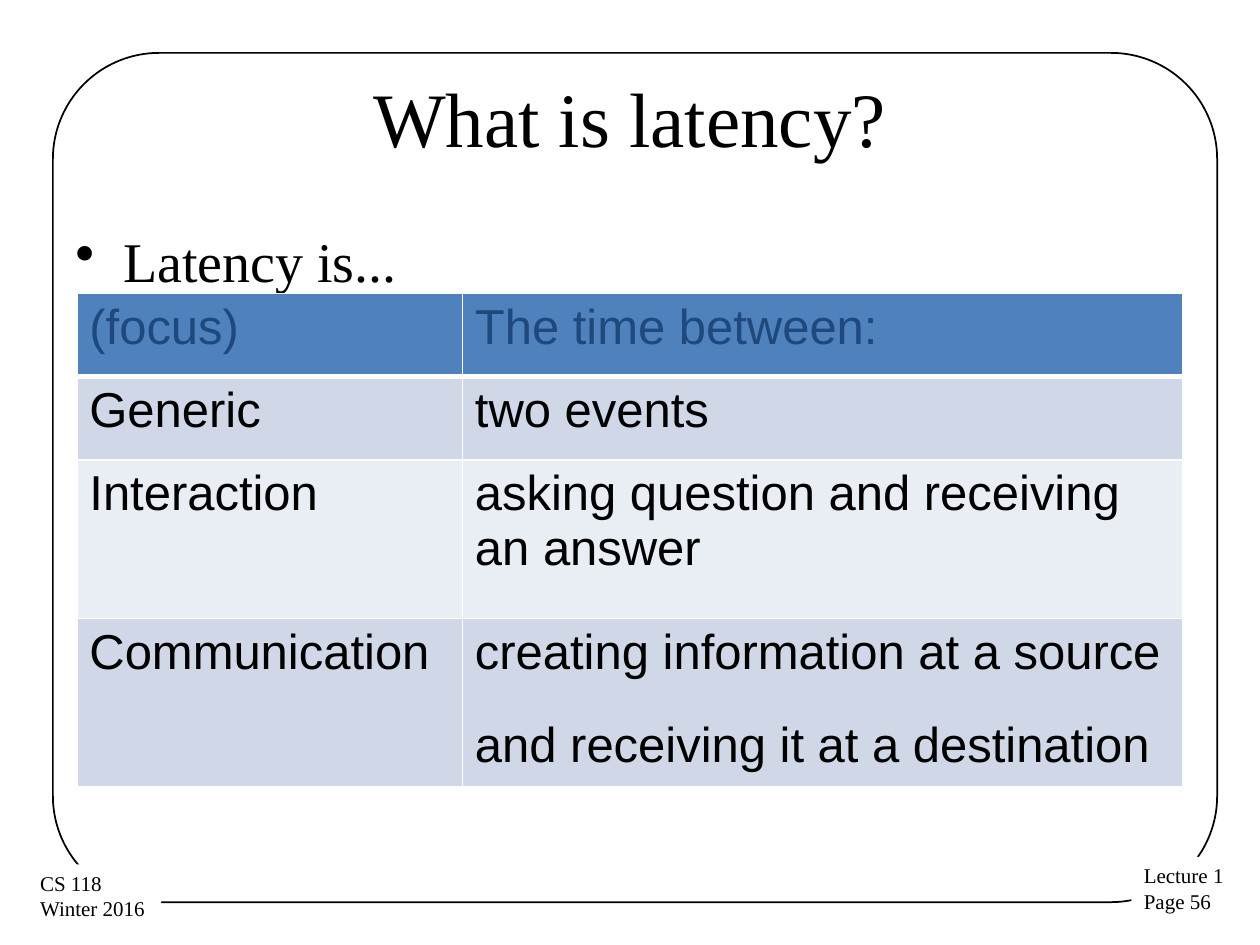
import pptx
import pptx.dml.color
import pptx.enum.shapes
import pptx.enum.text
import pptx.oxml
import pptx.oxml.ns
import pptx.util
from pptx.util import Inches

RGBColor = pptx.dml.color.RGBColor
BLACK = RGBColor(0x00, 0x00, 0x00)
WHITE = RGBColor(0xFF, 0xFF, 0xFF)
NAVY = RGBColor(0x1F, 0x49, 0x7D)
BLUE = RGBColor(0x4F, 0x81, 0xBD)
BAND_DARK = RGBColor(0xD0, 0xD8, 0xE8)
BAND_LIGHT = RGBColor(0xE9, 0xED, 0xF4)

ALIGN = pptx.enum.text.PP_ALIGN
ANCHOR = pptx.enum.text.MSO_ANCHOR
SHAPE = pptx.enum.shapes.MSO_SHAPE
SERIF = "Times New Roman"
SANS = "Arial"

LATENCY_ROWS = [
    ("(focus)", "The time between:"),
    ("Generic", "two events"),
    ("Interaction", "asking question and receiving an answer"),
    ("Communication", "creating information at a source \vand receiving it at a destination"),
]


class SlideBuilder:
    def __init__(self, slide):
        self.slide = slide

    def fill_paragraph(self, paragraph, text, size, font=SERIF, color=BLACK, align=ALIGN.LEFT):
        paragraph.text = text
        paragraph.alignment = align
        values = {"name": font, "size": pptx.util.Pt(size), "bold": False}
        for run in paragraph.runs:
            for name, value in values.items():
                setattr(run.font, name, value)
            run.font.color.rgb = color

    def frame(self, box, corner):
        shape = self.slide.shapes.add_shape(SHAPE.ROUNDED_RECTANGLE, *map(Inches, box))
        shape.adjustments[0] = corner
        shape.shadow.inherit = False
        shape.fill.background()
        shape.line.color.rgb = BLACK
        shape.line.width = pptx.util.Pt(1)

    def footer(self, box, lines):
        shape = self.slide.shapes.add_shape(SHAPE.RECTANGLE, *map(Inches, box))
        shape.shadow.inherit = False
        shape.fill.solid()
        shape.fill.fore_color.rgb = WHITE
        shape.line.fill.background()
        text_frame = shape.text_frame
        values = {
            "word_wrap": True,
            "vertical_anchor": ANCHOR.TOP,
            "auto_size": pptx.enum.text.MSO_AUTO_SIZE.SHAPE_TO_FIT_TEXT,
        }
        for name, value in values.items():
            setattr(text_frame, name, value)
        for index, line in enumerate(lines):
            paragraph = text_frame.add_paragraph() if index else text_frame.paragraphs[0]
            self.fill_paragraph(paragraph, line, 12)

    def text(self, box, text, size, align=ALIGN.LEFT, anchor=ANCHOR.TOP):
        shape = self.slide.shapes.add_textbox(*map(Inches, box))
        shape.text_frame.word_wrap = True
        shape.text_frame.vertical_anchor = anchor
        paragraph = shape.text_frame.paragraphs[0]
        self.fill_paragraph(paragraph, text, size, align=align)
        return paragraph

    def bullet(self, box, text, size):
        paragraph = self.text(box, text, size)
        paragraph.space_before = pptx.util.Pt(0.2 * size)
        properties = paragraph._p.get_or_add_pPr()
        indent = Inches(0.38)
        properties.set("marL", str(indent))
        properties.set("indent", str(-indent))
        mark = pptx.oxml.parse_xml(f'<a:buChar {pptx.oxml.ns.nsdecls("a")} char="•"/>')
        properties.append(mark)

    def border(self, cell, side, width):
        line = pptx.oxml.parse_xml(
            f'<a:ln{side} {pptx.oxml.ns.nsdecls("a")} w="{pptx.util.Pt(width)}">'
            f'<a:solidFill><a:srgbClr val="{WHITE}"/></a:solidFill></a:ln{side}>'
        )
        cell._tc.get_or_add_tcPr().append(line)

    def table(self, box, widths, heights, rows):
        table = self.slide.shapes.add_table(len(rows), len(widths), *map(Inches, box)).table
        for column, width in zip(table.columns, widths):
            column.width = Inches(width)
        for row_index, (row, height, texts) in enumerate(zip(table.rows, heights, rows)):
            row.height = Inches(height)
            header = row_index == 0
            band = BAND_DARK if row_index % 2 else BAND_LIGHT
            for cell, text in zip(row.cells, texts):
                for side in "LRTB":
                    self.border(cell, side, 3 if header and side == "B" else 1)
                cell.fill.solid()
                cell.fill.fore_color.rgb = BLUE if header else band
                color = NAVY if header else BLACK
                self.fill_paragraph(cell.text_frame.paragraphs[0], text, 28, SANS, color)


def main():
    presentation = pptx.Presentation()
    presentation.slide_width = Inches(10)
    presentation.slide_height = Inches(7.5)
    builder = SlideBuilder(presentation.slides.add_slide(presentation.slide_layouts[6]))

    builder.frame((0.42, 0.42, 9.24, 6.74), 0.125)
    builder.footer((8.98, 6.8, 0.84, 0.5), ("Lecture 1", "Page 56"))
    builder.footer((0.22, 6.86, 1.06, 0.51), ("CS 118", "Winter 2016"))
    builder.text((0.5, 0.3, 9, 1.25), "What is latency?", 44, ALIGN.CENTER, ANCHOR.MIDDLE)
    builder.bullet((0.5, 1.75, 9, 4.95), "Latency is...", 32)
    builder.table((0.61, 2.33, 8.78, 3.8), (3.06, 5.72), (0.66, 0.66, 1.26, 1.21), LATENCY_ROWS)

    presentation.save("out.pptx")


if __name__ == "__main__":
    main()
